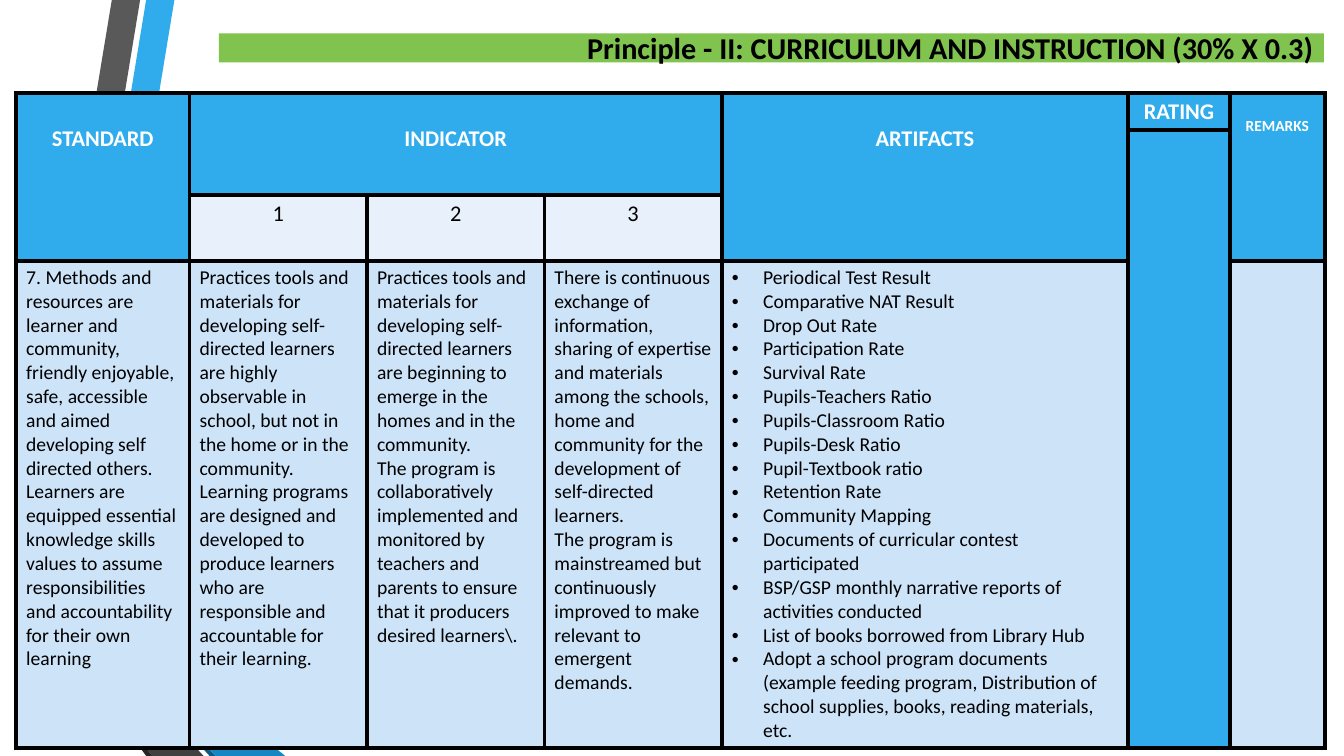
from lxml import etree
from pptx import Presentation
from pptx.dml.color import RGBColor
from pptx.enum.text import MSO_ANCHOR, MSO_AUTO_SIZE, PP_ALIGN
from pptx.oxml.ns import qn
from pptx.util import Inches, Pt

LEFT, CENTER, RIGHT = PP_ALIGN.LEFT, PP_ALIGN.CENTER, PP_ALIGN.RIGHT
MIDDLE, NO_AUTOFIT = MSO_ANCHOR.MIDDLE, MSO_AUTO_SIZE.NONE
FONT = "Calibri"
COLORS = {
    "header": "30ACEC", "level": "E8F1FB", "body": "CDE3F8", "title": "80C34F",
    "black": "000000", "white": "FFFFFF", "gray": "595959", "charcoal": "404040",
    "dark": "262626", "navy": "0C5A82", "blue": "1287C3",
}

# Content
TITLE = "Principle - II: CURRICULUM AND INSTRUCTION (30% X 0.3)"
# text, row, column, last row, last column, size, line spacing
HEADERS = [
    ("STANDARD", 0, 0, 2, 0, 16, 2.0),
    ("INDICATOR", 0, 1, 1, 3, 16, 2.0),
    ("ARTIFACTS", 0, 4, 2, 4, 16, 2.0),
    ("RATING", 0, 5, 0, 5, 16, 1.0),
    ("REMARKS", 0, 6, 2, 6, 11, 2.0),
]
LEVELS = ["1", "2", "3"]
STANDARD = [
    "7. Methods and resources are learner and community, friendly enjoyable, safe, "
    "accessible and aimed developing self directed others. Learners are equipped "
    "essential knowledge skills values to assume responsibilities and accountability "
    "for their own learning",
]
INDICATORS = [
    ["Practices tools and materials for developing self-directed learners are highly "
     "observable in school, but not in the home or in the community.",
     "Learning programs are designed and developed to produce learners who are "
     "responsible and accountable for their learning."],
    ["Practices tools and materials for developing self-directed learners are "
     "beginning to emerge in the homes and in the community.",
     "The program is collaboratively implemented and monitored by teachers and "
     "parents to ensure that it producers desired learners\\."],
    ["There is continuous exchange of information, sharing of expertise and materials "
     "among the schools, home and community for the development of self-directed "
     "learners.",
     "The program is mainstreamed but continuously improved to make relevant to "
     "emergent demands."],
]
ARTIFACTS = [
    "Periodical Test Result", "Comparative NAT Result", "Drop Out Rate",
    "Participation Rate", "Survival Rate", "Pupils-Teachers Ratio",
    "Pupils-Classroom Ratio", "Pupils-Desk Ratio", "Pupil-Textbook ratio",
    "Retention Rate", "Community Mapping",
    "Documents of curricular contest participated",
    "BSP/GSP monthly narrative reports of activities conducted",
    "List of books borrowed from Library Hub",
    "Adopt a school program documents (example feeding program, Distribution of "
    "school supplies, books, reading materials, etc.",
]
COLUMN_WIDTHS = [1.72, 1.76, 1.76, 1.76, 4.03, 1.01, 0.94]
ROW_HEIGHTS = [0.37, 0.64, 0.65, 4.83]
RIBBONS = [
    ("header", [(0.5, 5.78), (0.77, 5.83), (1.73, 0), (1.45, 0)]),
    ("gray", [(1.39, 0), (1.11, 0), (0.16, 5.73), (0.44, 5.77)]),
    ("dark", [(0.16, 5.73), (1.45, 7.5), (1.51, 7.5)]),
    ("navy", [(0.5, 5.79), (2.08, 7.5), (2.14, 7.5)]),
    ("blue", [(0.5, 5.79), (2.14, 7.5), (2.83, 7.5), (0.77, 5.83), (0.5, 5.78)]),
    ("charcoal", [(2.02, 7.5), (0.48, 5.83), (0.44, 5.77), (0.16, 5.73), (1.51, 7.5)]),
]


def rgb(name):
    return RGBColor.from_string(COLORS[name])


def paint(target, color):
    target.fill.solid()
    target.fill.fore_color.rgb = rgb(color)


def add_bullet(paragraph):
    properties = paragraph._p.get_or_add_pPr()
    properties.set("marL", str(Inches(0.31)))
    properties.set("indent", str(-Inches(0.31)))
    etree.SubElement(properties, qn("a:buFont"), typeface="Arial")
    etree.SubElement(properties, qn("a:buChar"), char="•")


def write(frame, lines, size, color="black", bold=False, align=LEFT, spacing=1.0,
          bullets=False):
    for i, line in enumerate(lines):
        paragraph = frame.add_paragraph() if i else frame.paragraphs[0]
        paragraph.alignment = align
        paragraph.line_spacing = spacing
        if bullets:
            add_bullet(paragraph)
        run = paragraph.add_run()
        run.text = line
        run.font.name = FONT
        run.font.size = Pt(size)
        run.font.bold = bold
        run.font.color.rgb = rgb(color)


def add_borders(cell):
    properties = cell._tc.get_or_add_tcPr()
    for i, side in enumerate(("a:lnL", "a:lnR", "a:lnT", "a:lnB")):
        border = etree.Element(qn(side), w=str(Pt(3)))
        fill = etree.SubElement(border, qn("a:solidFill"))
        etree.SubElement(fill, qn("a:srgbClr"), val=COLORS["black"])
        properties.insert(i, border)


def add_ribbons(slide):
    for color, points in RIBBONS:
        start, *rest = [(Inches(x), Inches(y)) for x, y in points]
        builder = slide.shapes.build_freeform(*start)
        builder.add_line_segments(rest, close=True)
        ribbon = builder.convert_to_shape()
        ribbon.shadow.inherit = False
        ribbon.line.fill.background()
        paint(ribbon, color)


def add_title(slide):
    title = slide.shapes.title
    title.left, title.top = Inches(2.17), Inches(0.33)
    title.width, title.height = Inches(10.96), Inches(0.29)
    paint(title, "title")
    frame = title.text_frame
    frame.auto_size = NO_AUTOFIT
    frame.vertical_anchor = MIDDLE
    write(frame, [TITLE], 21.6, bold=True, align=RIGHT)


def add_rubric(slide):
    rubric = slide.shapes.add_table(
        len(ROW_HEIGHTS), len(COLUMN_WIDTHS), Inches(0.16), Inches(0.92),
        Inches(sum(COLUMN_WIDTHS)), Inches(sum(ROW_HEIGHTS))).table
    for column, width in zip(rubric.columns, COLUMN_WIDTHS):
        column.width = Inches(width)
    for row, height in zip(rubric.rows, ROW_HEIGHTS):
        row.height = Inches(height)

    # Fills and borders
    for r in range(len(ROW_HEIGHTS)):
        for c in range(len(COLUMN_WIDTHS)):
            cell = rubric.cell(r, c)
            is_level = r == 2 and 1 <= c <= 3
            is_body = r == 3 and c != 5
            paint(cell, "level" if is_level else "body" if is_body else "header")
            add_borders(cell)

    # Header rows
    for text, top, left, bottom, right, size, spacing in HEADERS:
        cell = rubric.cell(top, left)
        if (top, left) != (bottom, right):
            cell.merge(rubric.cell(bottom, right))
        write(cell.text_frame, [text], size, "white", True, CENTER, spacing)
    rubric.cell(1, 5).merge(rubric.cell(3, 5))
    for c, level in enumerate(LEVELS, 1):
        write(rubric.cell(2, c).text_frame, [level], 16, align=CENTER)

    # Body row
    for c, lines in enumerate([STANDARD, *INDICATORS, ARTIFACTS]):
        write(rubric.cell(3, c).text_frame, lines, 14, bullets=lines is ARTIFACTS)


def main():
    deck = Presentation()
    deck.slide_width, deck.slide_height = Inches(13.33), Inches(7.5)
    slide = deck.slides.add_slide(deck.slide_layouts[5])
    add_ribbons(slide)
    add_title(slide)
    add_rubric(slide)
    deck.save("out.pptx")


if __name__ == "__main__":
    main()
